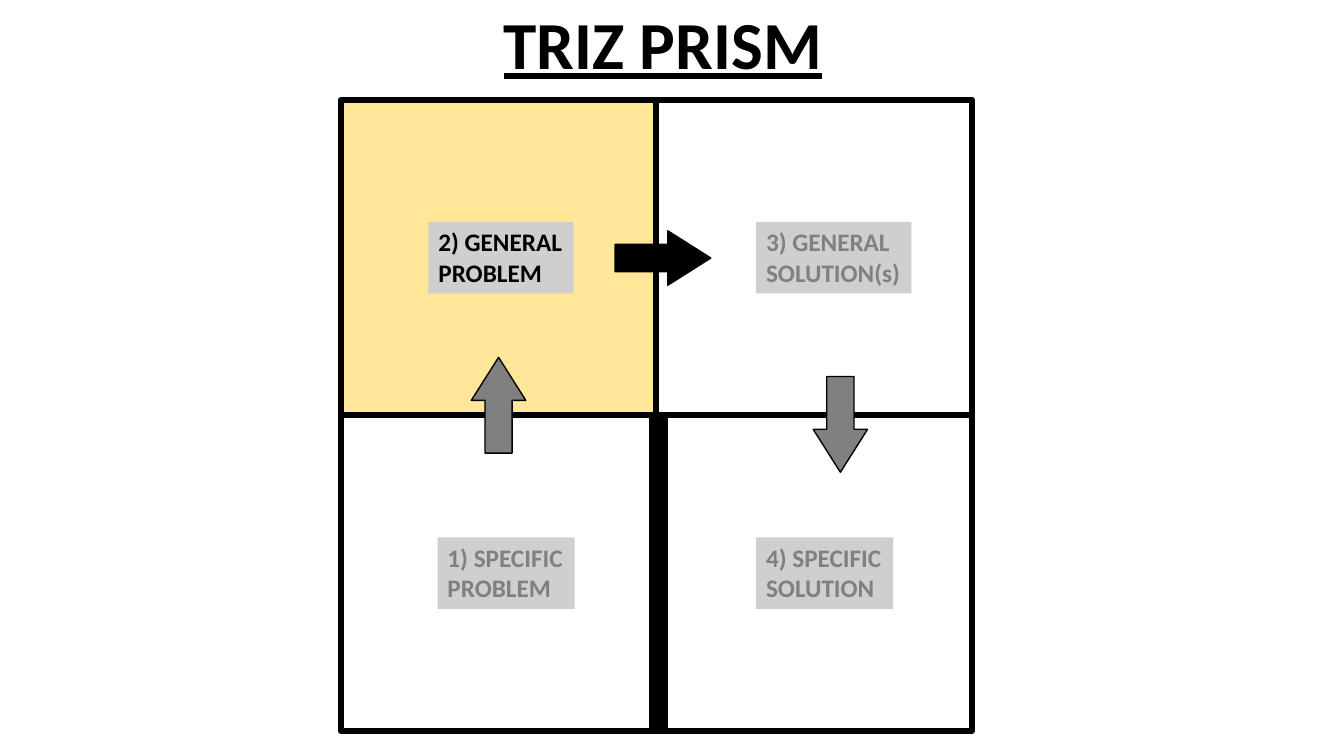
from lxml.etree import SubElement
from pptx import Presentation
from pptx.dml.color import RGBColor
from pptx.enum.shapes import MSO_CONNECTOR, MSO_SHAPE
from pptx.enum.text import MSO_ANCHOR, MSO_AUTO_SIZE, PP_ALIGN
from pptx.oxml.ns import qn
from pptx.util import Pt

PX = 9144  # 100 px to the inch
BLACK, GRAY, LABEL_FILL, HIGHLIGHT = "000000", "808080", "D0CECE", "FFE699"

TITLE = "TRIZ PRISM"
# column, row, fill
QUADRANTS = [(0, 0, HIGHLIGHT), (0, 1, None), (1, 0, None), (1, 1, None)]
# lines, row, left, width, text colour
LABELS = [
    (("1) SPECIFIC", "PROBLEM"), 1, 434, 136, GRAY),
    (("4) SPECIFIC", "SOLUTION"), 1, 750, 136, GRAY),
    (("2) GENERAL", "PROBLEM"), 0, 425, 144, BLACK),
    (("3) GENERAL", "SOLUTION(s)"), 0, 750, 154, GRAY),
]
# left, top, rotation, fill
ARROWS = [(447, 375, 270, GRAY), (786, 394, 90, GRAY), (610, 229, 0, BLACK)]
WALL = [648, 658]  # x of the two lines between problem and solution

GRID_LEFT, GRID_TOP, SIDE = 338, 99, 313
LABEL_TOP, LABEL_HEIGHT = 121, 71  # top is measured from the quadrant
ARROW_WIDTH, ARROW_HEIGHT = 95, 54


def color(value):
    return RGBColor.from_string(value)


def px(*lengths):
    return [length * PX for length in lengths]


def add_block(page, kind, box, fill=None, line_width=None):
    shape = page.shapes.add_shape(kind, *px(*box))
    shape.shadow.inherit = False
    if fill:
        shape.fill.solid()
        shape.fill.fore_color.rgb = color(fill)
    else:
        shape.fill.background()
    if line_width:
        shape.line.color.rgb = color(BLACK)
        shape.line.width = Pt(line_width)
    else:
        shape.line.fill.background()
    return shape


def write(shape, lines, size, ink, underline=False, align=PP_ALIGN.LEFT):
    frame = shape.text_frame
    frame.word_wrap = False
    frame.auto_size = MSO_AUTO_SIZE.SHAPE_TO_FIT_TEXT
    frame.vertical_anchor = MSO_ANCHOR.TOP
    for index, line in enumerate(lines):
        para = frame.add_paragraph() if index else frame.paragraphs[0]
        para.alignment = align
        span = para.add_run()
        span.text = line
        span.font.name = "Calibri"
        span.font.size = Pt(size)
        span.font.bold = True
        span.font.underline = underline
        span.font.color.rgb = color(ink)


def main():
    deck = Presentation()
    deck.slide_width, deck.slide_height = px(1333, 750)
    page = deck.slides.add_slide(deck.slide_layouts[6])

    # Quadrants
    for column, row, fill in QUADRANTS:
        box = (GRID_LEFT + column * SIDE, GRID_TOP + row * SIDE, SIDE, SIDE)
        add_block(page, MSO_SHAPE.RECTANGLE, box, fill, 4.5)

    # Wall between the specific problem and its solution
    middle = GRID_TOP + SIDE
    for x in WALL:
        wall = page.shapes.add_connector(
            MSO_CONNECTOR.STRAIGHT, *px(x, middle, x, middle + SIDE))
        wall.line.color.rgb = color(BLACK)
        wall.line.width = Pt(6)
        SubElement(wall.element.spPr, qn("a:effectLst"))

    # Labels
    for lines, row, left, width, ink in LABELS:
        top = GRID_TOP + row * SIDE + LABEL_TOP
        label = add_block(page, MSO_SHAPE.RECTANGLE,
                          (left, top, width, LABEL_HEIGHT), LABEL_FILL)
        write(label, lines, 18, ink)

    # Arrows
    for left, top, rotation, fill in ARROWS:
        arrow = add_block(page, MSO_SHAPE.RIGHT_ARROW,
                          (left, top, ARROW_WIDTH, ARROW_HEIGHT), fill, 1)
        arrow.adjustments[1] = 0.79
        arrow.rotation = rotation

    # Title
    title = page.shapes.add_textbox(*px(488, -3, 339, 91))
    write(title, [TITLE], 48, BLACK, underline=True, align=PP_ALIGN.CENTER)

    deck.save("out.pptx")


if __name__ == "__main__":
    main()
